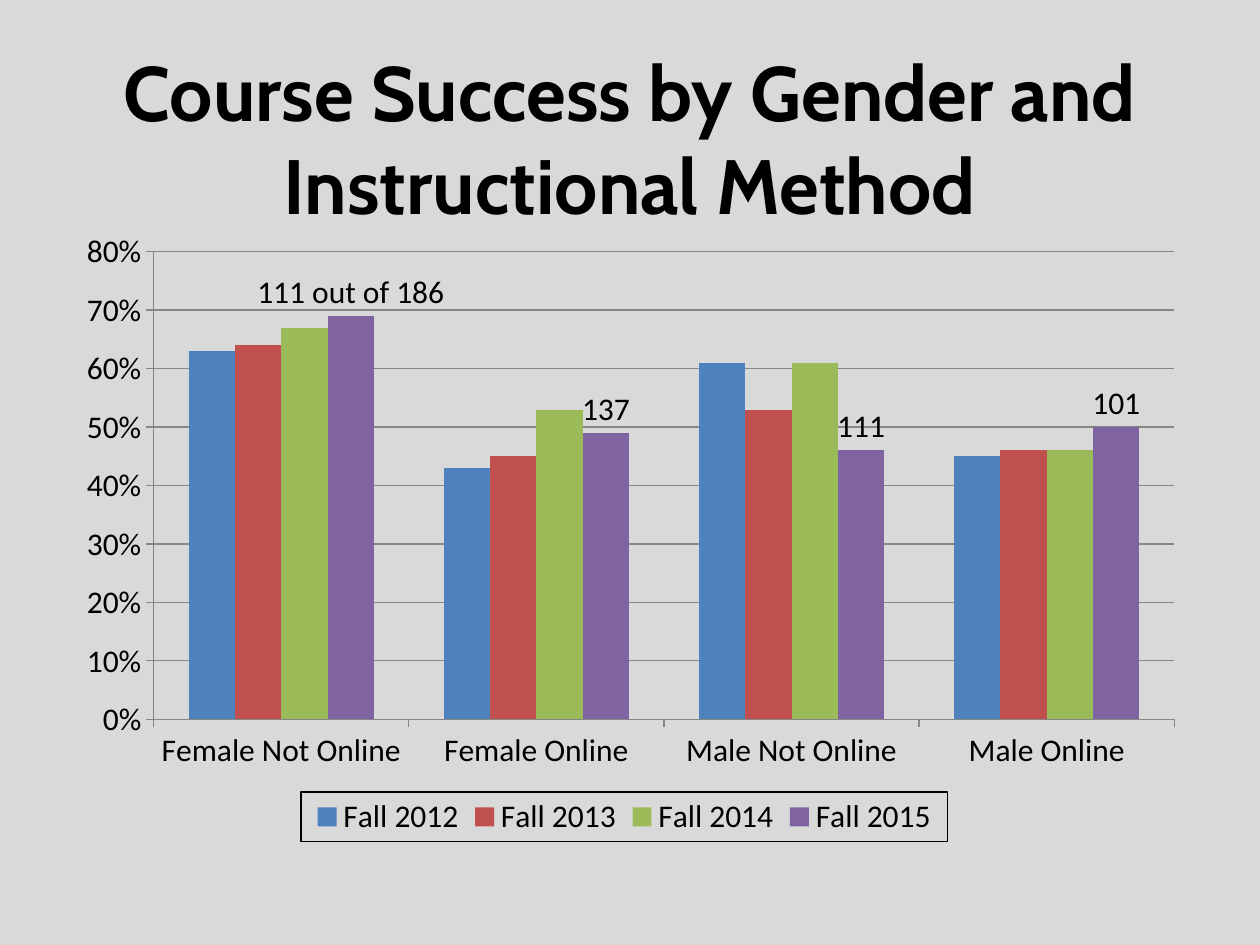
from lxml import etree
from pptx import Presentation
from pptx.chart.data import CategoryChartData
from pptx.dml.color import RGBColor
from pptx.enum.chart import XL_CHART_TYPE as ChartType
from pptx.enum.chart import XL_LABEL_POSITION as LabelPos
from pptx.enum.chart import XL_LEGEND_POSITION as LegendPos
from pptx.enum.chart import XL_TICK_MARK as Tick
from pptx.enum.text import MSO_ANCHOR, PP_ALIGN
from pptx.oxml import parse_xml
from pptx.oxml.ns import nsdecls, qn
from pptx.util import Inches, Pt

BACKGROUND = RGBColor(0xD9, 0xD9, 0xD9)
BLACK = RGBColor(0, 0, 0)
GRID_GRAY = RGBColor(0x86, 0x86, 0x86)

CATEGORIES = ["Female Not Online", "Female Online", "Male Not Online", "Male Online"]
SERIES = [
    ("Fall 2012", (0.63, 0.43, 0.61, 0.45), RGBColor(0x4F, 0x81, 0xBD)),
    ("Fall 2013", (0.64, 0.45, 0.53, 0.46), RGBColor(0xC0, 0x50, 0x4D)),
    ("Fall 2014", (0.67, 0.53, 0.61, 0.46), RGBColor(0x9B, 0xBB, 0x59)),
    ("Fall 2015", (0.69, 0.49, 0.46, 0.50), RGBColor(0x80, 0x64, 0xA2)),
]
COUNT_LABELS = ["111 out of 186", "137", "111", "101"]


def style_font(font, name, size, bold=False):
    font.name = name
    font.size = Pt(size)
    font.bold = bold
    font.color.rgb = BLACK


def style_line(line, color=GRID_GRAY):
    line.color.rgb = color
    line.width = Pt(0.75)


def add_title(slide, text):
    sp = slide.shapes.title
    sp.left, sp.top, sp.width, sp.height = map(Inches, (0.5, 0.3, 9, 1.58))
    tf = sp.text_frame
    tf.text = text
    tf.word_wrap = True
    tf.vertical_anchor = MSO_ANCHOR.MIDDLE
    p = tf.paragraphs[0]
    p.alignment = PP_ALIGN.CENTER
    style_font(p.runs[0].font, "Cabin", 44, bold=True)


def make_layout(x, y, w, h, inner=False):
    """Manual chart layout, in fractions of the chart's size."""
    target = '<c:layoutTarget val="inner"/>' if inner else ""
    return parse_xml(
        f'<c:layout {nsdecls("c")}><c:manualLayout>{target}'
        '<c:xMode val="edge"/><c:yMode val="edge"/>'
        f'<c:x val="{x}"/><c:y val="{y}"/><c:w val="{w}"/><c:h val="{h}"/>'
        "</c:manualLayout></c:layout>"
    )


def set_layout(parent, index, layout):
    for old in parent.findall(qn("c:layout")):
        parent.remove(old)
    parent.insert(index, layout)


def add_legend(chart):
    chart.has_legend = True
    legend = chart.legend
    legend.position = LegendPos.BOTTOM
    legend.include_in_layout = False
    element = chart._chartSpace.chart.find(qn("c:legend"))
    set_layout(element, 1, make_layout(0.21, 0.92, 0.57, 0.08))
    # Thin black frame
    frame = parse_xml(
        f'<c:spPr {nsdecls("c", "a")}><a:ln w="9525"><a:solidFill>'
        f'<a:srgbClr val="{BLACK}"/></a:solidFill></a:ln></c:spPr>'
    )
    element.find(qn("c:overlay")).addnext(frame)


def style_axes(chart):
    value_axis = chart.value_axis
    value_axis.minimum_scale, value_axis.maximum_scale = 0, 0.8
    value_axis.major_unit = 0.1
    value_axis.has_major_gridlines = True
    style_line(value_axis.major_gridlines.format.line)
    value_axis.tick_labels.number_format = "0%"
    value_axis.tick_labels.number_format_is_linked = False
    for axis in (value_axis, chart.category_axis):
        axis.major_tick_mark = Tick.OUTSIDE
        axis.minor_tick_mark = Tick.NONE
        style_line(axis.format.line)


def label_counts(series, labels):
    for i, text in enumerate(labels):
        label = series.points[i].data_label
        tf = label.text_frame
        tf.text = text
        style_font(tf.paragraphs[0].runs[0].font, "Calibri", 18)
        label.position = LabelPos.OUTSIDE_END


def add_success_chart(slide):
    data = CategoryChartData(number_format="0%")
    data.categories = CATEGORIES
    for name, values, _ in SERIES:
        data.add_series(name, values)
    box = map(Inches, (0.5, 1.75, 9, 4.95))
    chart = slide.shapes.add_chart(ChartType.COLUMN_CLUSTERED, *box, data).chart
    chart.has_title = False
    style_font(chart.font, "Calibri", 18)

    plot = chart.plots[0]
    plot.gap_width = 150
    plot.overlap = 0
    plot.vary_by_categories = False
    for series, (_, _, color) in zip(plot.series, SERIES):
        series.format.fill.solid()
        series.format.fill.fore_color.rgb = color
    label_counts(plot.series[-1], COUNT_LABELS)

    style_axes(chart)
    add_legend(chart)
    set_layout(chart._chartSpace.chart.plotArea, 0,
               make_layout(0.08, 0.05, 0.9, 0.75, inner=True))


def main():
    prs = Presentation()
    prs.slide_width, prs.slide_height = Inches(10), Inches(7.5)
    slide = prs.slides.add_slide(prs.slide_layouts[5])
    slide.background.fill.solid()
    slide.background.fill.fore_color.rgb = BACKGROUND
    add_title(slide, "Course Success by Gender and Instructional Method")
    add_success_chart(slide)
    prs.save("out.pptx")


if __name__ == "__main__":
    main()
